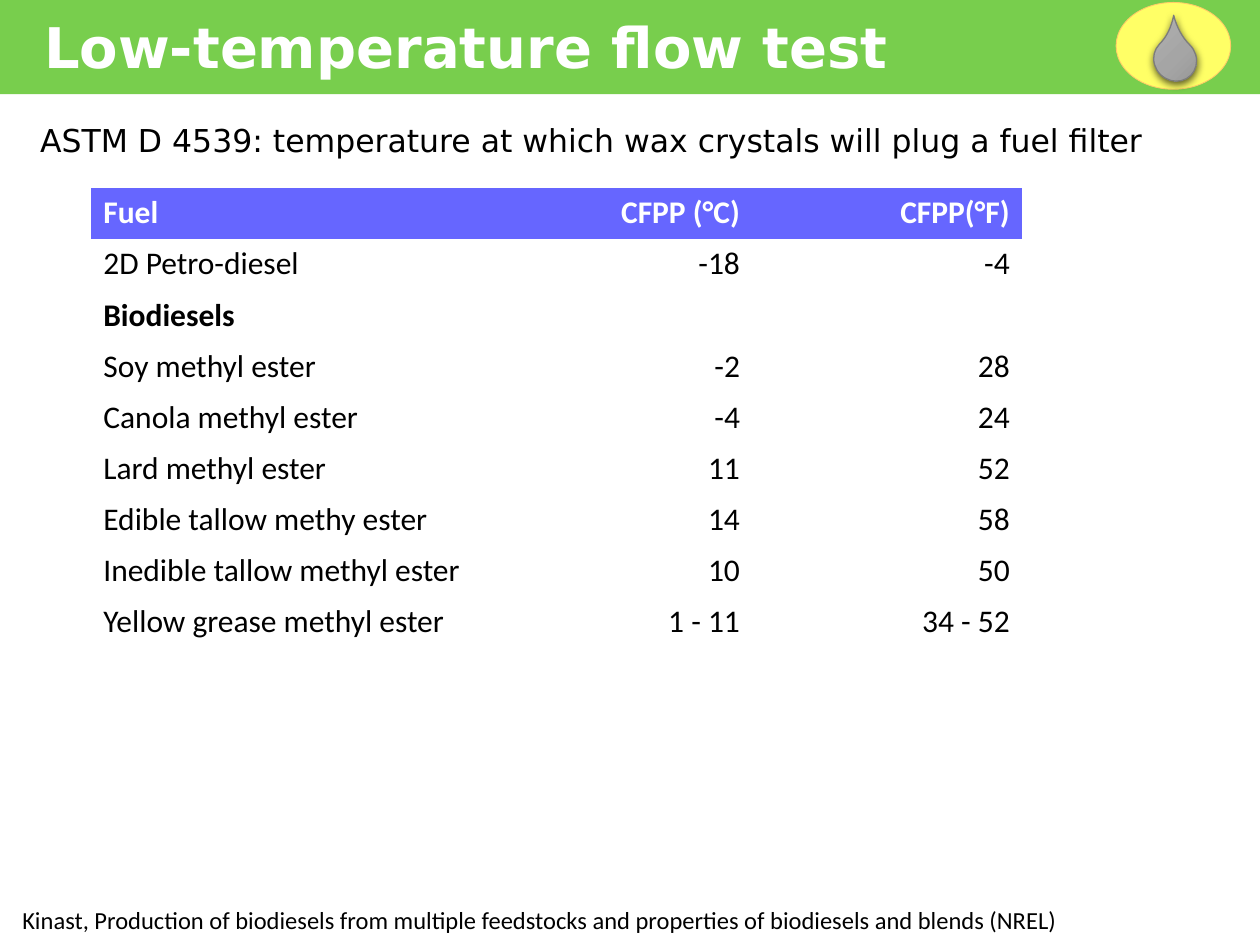
from copy import deepcopy

from lxml.etree import SubElement
from pptx import Presentation
from pptx.dml.color import RGBColor
from pptx.enum.shapes import MSO_SHAPE as Shape
from pptx.enum.text import MSO_AUTO_SIZE as AutoSize, PP_ALIGN as Align
from pptx.oxml.ns import qn
from pptx.util import Cm, Pt

WHITE = RGBColor(0xFF, 0xFF, 0xFF)
BLACK = RGBColor(0x00, 0x00, 0x00)
GREEN = RGBColor(0x78, 0xCE, 0x4D)
BLUE = RGBColor(0x66, 0x66, 0xFF)
YELLOW = RGBColor(0xFF, 0xFF, 0x66)
ORANGE = RGBColor(0xFF, 0xCC, 0x66)
DROP_LINE = RGBColor(0x7C, 0x7C, 0x7C)
DROP_STOPS = [
    (0, RGBColor(0xAF, 0xAF, 0xAF)),
    (0.5, RGBColor(0xA5, 0xA5, 0xA5)),
    (1, RGBColor(0x93, 0x93, 0x93)),
]

HEADING_FONT = "DejaVu Sans"
BODY_FONT = "Calibri"

TITLE = "Low-temperature flow test"
SUBTITLE = "ASTM D 4539: temperature at which wax crystals will plug a fuel filter"
SOURCE = ("Kinast, Production of biodiesels from multiple feedstocks "
          "and properties of biodiesels and blends (NREL)")
FUELS = [
    ("Fuel", "CFPP (°C)", "CFPP(°F)"),
    ("2D Petro-diesel", "-18", "-4"),
    ("Biodiesels", "", ""),
    ("Soy methyl ester", "-2", "28"),
    ("Canola methyl ester", "-4", "24"),
    ("Lard methyl ester", "11", "52"),
    ("Edible tallow methy ester", "14", "58"),
    ("Inedible tallow methyl ester", "10", "50"),
    ("Yellow grease methyl ester", "1 - 11", "34 - 52"),
]
BOLD_ROWS = (0, 2)
COLUMN_WIDTHS = (7.9, 5.44, 5.44)
ROW_HEIGHT = 1.03


def style(paragraph, font, size, color, bold=False):
    for run in paragraph.runs:
        run.font.name = font
        run.font.size = Pt(size)
        run.font.color.rgb = color
        run.font.bold = bold


def add_text(slide, box, text, font, size, color, bold=False, wrap=False):
    frame = slide.shapes.add_textbox(*map(Cm, box)).text_frame
    frame.word_wrap = wrap
    frame.auto_size = AutoSize.SHAPE_TO_FIT_TEXT
    frame.text = text
    style(frame.paragraphs[0], font, size, color, bold)
    return frame.paragraphs[0]


def add_plain_shape(shapes, kind, box, fill=None, line=None, line_width=0):
    shape = shapes.add_shape(kind, *map(Cm, box))
    shape.shadow.inherit = False
    if fill is not None:
        shape.fill.solid()
        shape.fill.fore_color.rgb = fill
    if line is None:
        shape.line.fill.background()
    else:
        shape.line.color.rgb = line
        shape.line.width = Pt(line_width)
    return shape


def shade_drop(drop):
    """Give the drop its three-stop gradient and soft shadow."""
    drop.fill.gradient()
    drop.fill.gradient_angle = 270
    properties = drop._element.spPr
    stops = properties.find(qn("a:gradFill")).find(qn("a:gsLst"))
    stops.insert(1, deepcopy(stops[0]))
    for stop, (position, color) in zip(drop.fill.gradient_stops, DROP_STOPS):
        stop.position = position
        stop.color.rgb = color
    shadow = SubElement(properties.find(qn("a:effectLst")), qn("a:outerShdw"),
                        blurRad=str(Pt(4.5)), dist=str(Pt(1.5)),
                        dir="5400000", algn="ctr", rotWithShape="0")
    color = SubElement(shadow, qn("a:srgbClr"), val=str(BLACK))
    SubElement(color, qn("a:alpha"), val="63000")


def add_drop_badge(slide):
    badge = slide.shapes.add_group_shape().shapes
    add_plain_shape(badge, Shape.OVAL, (22.5, 0.05, 2.31, 1.75), YELLOW, ORANGE, 0.5)
    drop = add_plain_shape(badge, Shape.TEAR, (23.27, 0.76, 0.84, 0.89),
                           line=DROP_LINE, line_width=0.75)
    drop.adjustments[0] = 1.465
    drop.rotation = 314.8
    shade_drop(drop)


def add_fuel_table(slide):
    table = slide.shapes.add_table(
        len(FUELS), len(COLUMN_WIDTHS), Cm(1.83), Cm(3.78),
        Cm(sum(COLUMN_WIDTHS)), Cm(ROW_HEIGHT * len(FUELS))).table
    table.horz_banding = False
    for column, width in zip(table.columns, COLUMN_WIDTHS):
        column.width = Cm(width)
    for r, values in enumerate(FUELS):
        table.rows[r].height = Cm(ROW_HEIGHT)
        for c, value in enumerate(values):
            cell = table.cell(r, c)
            if r == 0:
                cell.fill.solid()
                cell.fill.fore_color.rgb = BLUE
            else:
                cell.fill.background()
            add_no_borders(cell)
            cell.text_frame.text = value
            paragraph = cell.text_frame.paragraphs[0]
            paragraph.alignment = Align.RIGHT if c else Align.LEFT
            style(paragraph, BODY_FONT, 18, BLACK if r else WHITE, r in BOLD_ROWS)


def add_no_borders(cell):
    properties = cell._tc.get_or_add_tcPr()
    for position, side in enumerate(("lnL", "lnR", "lnT", "lnB")):
        border = SubElement(properties, qn(f"a:{side}"), w="0")
        SubElement(border, qn("a:noFill"))
        properties.insert(position, border)


def main():
    deck = Presentation()
    deck.slide_width, deck.slide_height = Cm(25.4), Cm(19.05)
    slide = deck.slides.add_slide(deck.slide_layouts[6])

    add_plain_shape(slide.shapes, Shape.RECTANGLE, (0, 0, 25.4, 1.9), GREEN)
    add_text(slide, (0.64, 0.13, 17.73, 1.63), TITLE, HEADING_FONT, 32, WHITE, bold=True)
    add_drop_badge(slide)
    add_text(slide, (0.2, 18.11, 21.44, 0.86), SOURCE, BODY_FONT, 14, BLACK)
    add_fuel_table(slide)
    subtitle = add_text(slide, (0.56, 2.16, 23.72, 1.09), SUBTITLE,
                        HEADING_FONT, 18, BLACK, wrap=True)
    subtitle.line_spacing = 1.2

    deck.save("out.pptx")


if __name__ == "__main__":
    main()
